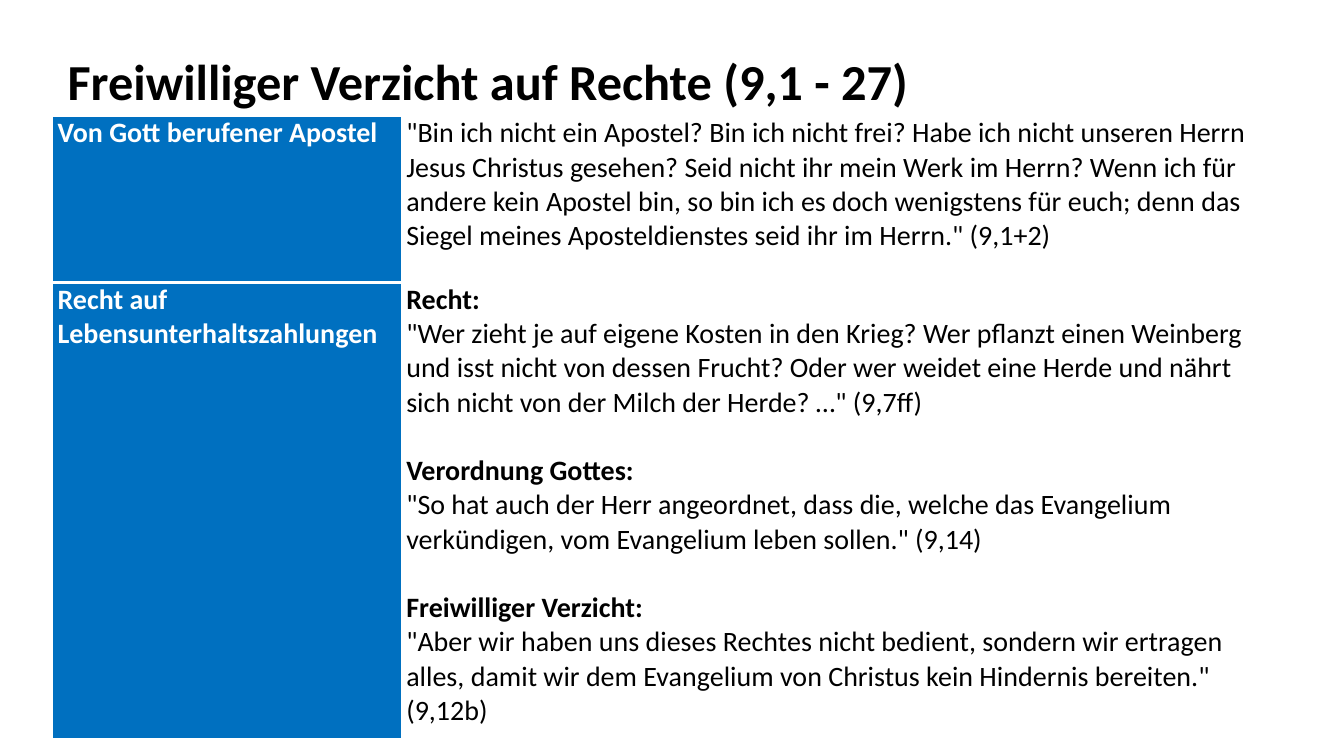
import pptx
import pptx.dml.color
import pptx.enum.text
import pptx.oxml
import pptx.oxml.ns
import pptx.util
from pptx.util import Cm

BLUE, WHITE, BLACK = "0070C0", "FFFFFF", "000000"


def color(value):
    return pptx.dml.color.RGBColor.from_string(value)


def add_text(paragraph, text, size, bold, text_color):
    run = paragraph.add_run()
    run.text = text
    run.font.name = "Calibri"
    run.font.size = pptx.util.Pt(size)
    run.font.bold = bold
    run.font.color.rgb = color(text_color)


presentation = pptx.Presentation()
presentation.slide_width = Cm(33.87)
presentation.slide_height = Cm(19.05)
slide = presentation.slides.add_slide(presentation.slide_layouts[5])

title = slide.shapes.title
title.left, title.top, title.width, title.height = Cm(1.45), Cm(1.14), Cm(21.92), Cm(1.8)
title.text_frame.word_wrap = False
title.text_frame.auto_size = pptx.enum.text.MSO_AUTO_SIZE.SHAPE_TO_FIT_TEXT
title.text_frame.vertical_anchor = pptx.enum.text.MSO_ANCHOR.TOP
heading = title.text_frame.paragraphs[0]
heading.alignment = pptx.enum.text.PP_ALIGN.LEFT
add_text(heading, "Freiwilliger Verzicht auf Rechte (9,1 - 27)", 36, True, BLACK)

topics = [
    ("Von Gott berufener Apostel", [
        ("", "\"Bin ich nicht ein Apostel? Bin ich nicht frei? Habe ich nicht unseren Herrn "
             "Jesus Christus gesehen? Seid nicht ihr mein Werk im Herrn? Wenn ich für andere "
             "kein Apostel bin, so bin ich es doch wenigstens für euch; denn das Siegel meines "
             "Aposteldienstes seid ihr im Herrn.\" (9,1+2)"),
    ]),
    ("Recht auf Lebensunterhaltszahlungen", [
        ("Recht:", "\"Wer zieht je auf eigene Kosten in den Krieg? Wer pflanzt einen Weinberg "
                   "und isst nicht von dessen Frucht? Oder wer weidet eine Herde und nährt sich "
                   "nicht von der Milch der Herde? …\" (9,7ff)"),
        ("Verordnung Gottes:", "\"So hat auch der Herr angeordnet, dass die, welche das "
                               "Evangelium verkündigen, vom Evangelium leben sollen.\" (9,14)"),
        ("Freiwilliger Verzicht:", "\"Aber wir haben uns dieses Rechtes nicht bedient, sondern "
                                   "wir ertragen alles, damit wir dem Evangelium von Christus "
                                   "kein Hindernis bereiten.\" (9,12b)"),
    ]),
]

table = slide.shapes.add_table(2, 2, Cm(1.32), Cm(2.93), Cm(30.4), Cm(15.67)).table
table.columns[0].width, table.columns[1].width = Cm(8.79), Cm(21.61)
table.rows[0].height, table.rows[1].height = Cm(4.19), Cm(11.48)

border_widths = [
    {"lnL": 1, "lnR": 1, "lnT": 1, "lnB": 3},
    {"lnL": 1, "lnR": 1, "lnT": 3, "lnB": 1},
]
for row, (topic, quotes) in enumerate(topics):
    for column, fill in enumerate((BLUE, WHITE)):
        cell = table.cell(row, column)
        cell.margin_left = cell.margin_right = Cm(0.13)
        cell.margin_top = cell.margin_bottom = 0
        properties = cell._tc.get_or_add_tcPr()
        for side, width in border_widths[row].items():
            properties.append(pptx.oxml.parse_xml(
                f'<a:{side} {pptx.oxml.ns.nsdecls("a")} w="{pptx.util.Pt(width)}">'
                f'<a:solidFill><a:srgbClr val="{WHITE}"/></a:solidFill></a:{side}>'))
        cell.fill.solid()
        cell.fill.fore_color.rgb = color(fill)

    add_text(table.cell(row, 0).text_frame.paragraphs[0], topic, 20, True, WHITE)

    text_frame = table.cell(row, 1).text_frame
    paragraph = text_frame.paragraphs[0]
    for index, (label, quote) in enumerate(quotes):
        if index:
            paragraph = text_frame.add_paragraph()
            paragraph.space_before = pptx.util.Pt(24.4)
        if label:
            add_text(paragraph, label, 20, True, BLACK)
            paragraph = text_frame.add_paragraph()
        add_text(paragraph, quote, 20, False, BLACK)

presentation.save("out.pptx")
